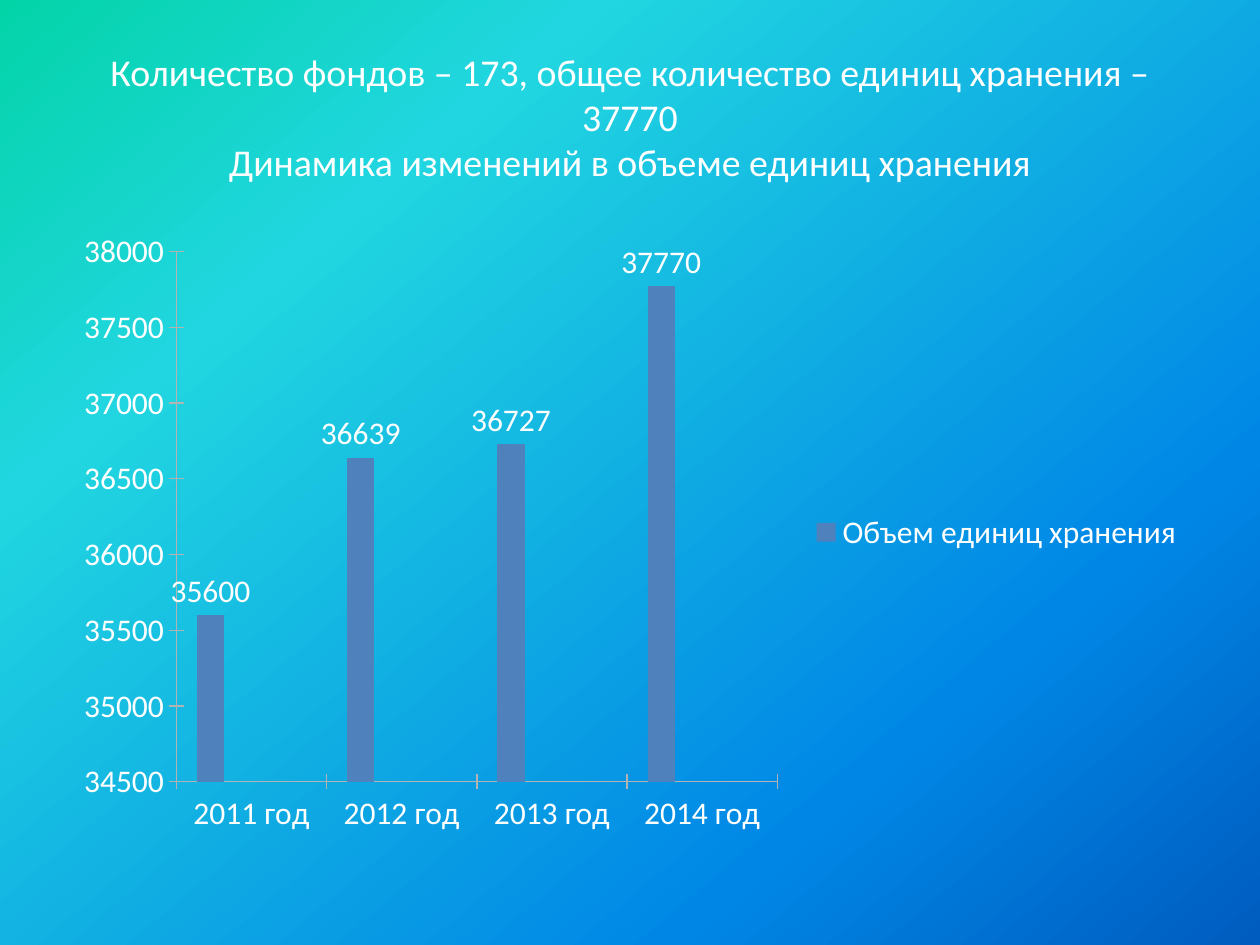
import pptx
import pptx.chart.data
import pptx.dml.color
import pptx.enum.chart
import pptx.enum.text
import pptx.oxml
import pptx.oxml.ns
import pptx.util

COLORS = {
    "text": "FFFFFF",
    "axis": "B3B3B3",
    "series": ["4F81BD", "C0504D", "9BBB59", "8064A2"],
    "gradient": [(0, "03D4A8"), (25, "21D6E0"), (75, "0087E6"), (100, "005CBF")],
}
YEARS = ["2011 год", "2012 год", "2013 год", "2014 год"]
VOLUMES = [35600, 36639, 36727, 37770]


def rgb(color):
    return pptx.dml.color.RGBColor.from_string(color)


def xml(markup):
    namespaces = pptx.oxml.ns.nsdecls("a", "c")
    tag, rest = markup.split(">", 1)
    return pptx.oxml.parse_xml(f"{tag} {namespaces}>{rest}")


class SlideBuilder:
    font_name = "Calibri"

    def __init__(self, presentation):
        self.width = presentation.slide_width
        self.height = presentation.slide_height
        self.slide = presentation.slides.add_slide(presentation.slide_layouts[5])

    def box(self, left, top, width, height):
        return (int(left * self.width), int(top * self.height),
                int(width * self.width), int(height * self.height))

    def style_font(self, font, size):
        font.name = self.font_name
        font.size = pptx.util.Pt(size)
        font.color.rgb = rgb(COLORS["text"])

    def background(self, stops, angle):
        fill = self.slide.background.fill
        fill.gradient()
        fill.gradient_angle = 360 - angle
        markup = "".join(
            f'<a:gs pos="{share * 1000}"><a:srgbClr val="{color}"/></a:gs>'
            for share, color in stops)
        properties = self.slide.background._cSld.bg.bgPr
        old_stops = properties.find(".//" + pptx.oxml.ns.qn("a:gsLst"))
        old_stops.getparent().replace(old_stops, xml(f"<a:gsLst>{markup}</a:gsLst>"))

    def title(self, text, share, size):
        title = self.slide.shapes.title
        title.left, title.top, title.width, title.height = self.box(*share)
        frame = title.text_frame
        frame.text = text
        frame.word_wrap = True
        frame.auto_size = pptx.enum.text.MSO_AUTO_SIZE.NONE
        frame.vertical_anchor = pptx.enum.text.MSO_ANCHOR.MIDDLE
        paragraph = frame.paragraphs[0]
        paragraph.alignment = pptx.enum.text.PP_ALIGN.CENTER
        for run in paragraph.runs:
            self.style_font(run.font, size)

    def axis(self, axis):
        axis.has_major_gridlines = False
        axis.major_tick_mark = pptx.enum.chart.XL_TICK_MARK.CROSS
        axis.minor_tick_mark = pptx.enum.chart.XL_TICK_MARK.NONE
        axis.format.line.color.rgb = rgb(COLORS["axis"])
        axis.format.line.width = pptx.util.Pt(0.75)

    def plot_layout(self, chart, left, top, width, height):
        sizes = {"x": left, "y": top, "w": width, "h": height}
        modes = "".join(f'<c:{name}Mode val="edge"/>' for name in "xy")
        values = "".join(f'<c:{name} val="{value}"/>' for name, value in sizes.items())
        area = chart._chartSpace.chart.plotArea
        for layout in area.findall(pptx.oxml.ns.qn("c:layout")):
            area.remove(layout)
        area.insert(0, xml(
            '<c:layout><c:manualLayout><c:layoutTarget val="inner"/>'
            f"{modes}{values}</c:manualLayout></c:layout>"))

    def legend(self, chart, hidden):
        chart.has_legend = True
        legend = chart.legend
        legend.position = pptx.enum.chart.XL_LEGEND_POSITION.RIGHT
        legend.include_in_layout = False
        for offset, index in enumerate(hidden, 1):
            legend._element.insert(offset, xml(
                f'<c:legendEntry><c:idx val="{index}"/><c:delete val="1"/></c:legendEntry>'))

    def column_chart(self, categories, series, share, size):
        data = pptx.chart.data.CategoryChartData()
        data.categories = categories
        for name, values in series:
            data.add_series(name, values)
        chart = self.slide.shapes.add_chart(
            pptx.enum.chart.XL_CHART_TYPE.COLUMN_CLUSTERED, *self.box(*share), data).chart
        chart.has_title = False
        self.style_font(chart.font, size)
        plot = chart.plots[0]
        plot.vary_by_categories = False
        plot.gap_width = 150
        for column, color in zip(plot.series, COLORS["series"]):
            column.format.fill.solid()
            column.format.fill.fore_color.rgb = rgb(color)
        labels = plot.series[0].data_labels
        labels.show_value = True
        labels.position = pptx.enum.chart.XL_LABEL_POSITION.OUTSIDE_END
        self.style_font(labels.font, size)
        self.axis(chart.category_axis)
        self.axis(chart.value_axis)
        chart.value_axis.minimum_scale = 34500
        chart.value_axis.maximum_scale = 38000
        chart.value_axis.major_unit = 500
        self.legend(chart, range(1, len(series)))
        self.plot_layout(chart, 0.1, 0.05, 0.53, 0.85)


def main():
    presentation = pptx.Presentation()
    presentation.slide_width = pptx.util.Inches(10)
    presentation.slide_height = pptx.util.Inches(7.5)
    builder = SlideBuilder(presentation)
    builder.background(COLORS["gradient"], 50)
    builder.title(
        "Количество фондов – 173, общее количество единиц хранения – 37770\v"
        "Динамика изменений в объеме единиц хранения",
        (0.05, 0.04, 0.9, 1 / 6), 21.6)
    empty = [None] * len(YEARS)
    series = [("Объем единиц хранения", VOLUMES)]
    series += [(f"Series {number}", empty) for number in range(2, 5)]
    builder.column_chart(YEARS, series, (0.05, 7 / 30, 0.9, 0.66), 18)
    presentation.save("out.pptx")


if __name__ == "__main__":
    main()
